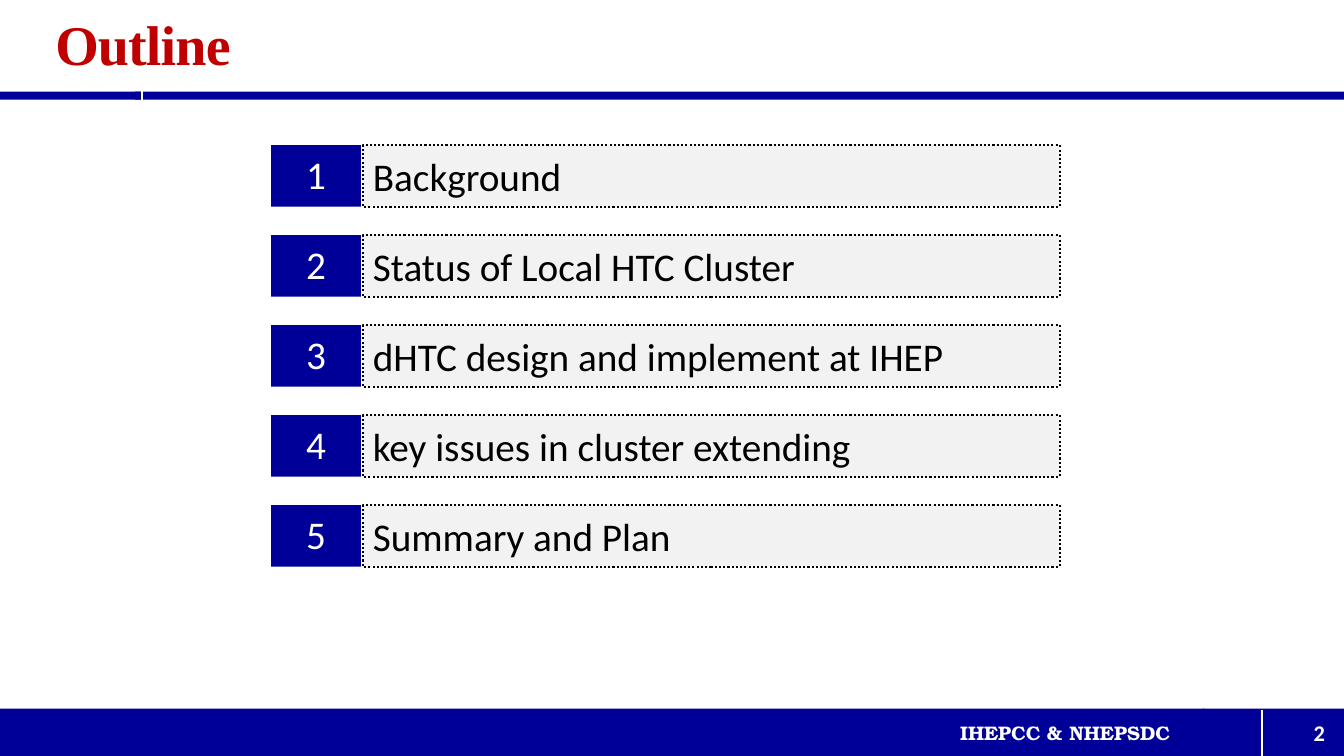
from lxml.etree import SubElement
from pptx import Presentation
from pptx.dml.color import RGBColor
from pptx.enum.dml import MSO_LINE
from pptx.enum.shapes import MSO_CONNECTOR, MSO_SHAPE
from pptx.enum.text import MSO_ANCHOR, PP_ALIGN
from pptx.oxml.ns import qn
from pptx.util import Inches, Pt

TITLE = "Outline"
TOPICS = [
    "Background",
    "Status of Local HTC Cluster",
    "dHTC design and implement at IHEP",
    "key issues in cluster extending",
    "Summary and Plan",
]
FOOTER = "IHEPCC & NHEPSDC"
PAGE = "2"

NAVY, RED, GREY, WHITE, BLACK = "000099", "C00000", "F2F2F2", "FFFFFF", "000000"
WIDTH, HEIGHT = 13.33, 7.5
RULE_TOP, RULE_HEIGHT, RULE_SPLIT = 0.91, 0.08, 1.41
FOOTER_TOP, PAGE_LEFT, PAGE_SPLIT = 7.03, 11.93, 12.52
LIST_TOP, ROW_STEP, ROW_HEIGHT = 1.44, 0.893, 0.61
NUMBER_LEFT, NUMBER_WIDTH = 2.69, 0.89
TOPIC_LEFT, TOPIC_WIDTH = 3.6, 6.91

deck = Presentation()
deck.slide_width, deck.slide_height = Inches(WIDTH), Inches(HEIGHT)
slide = deck.slides.add_slide(deck.slide_layouts[6])


def color(value):
    return RGBColor.from_string(value)


def block(left, top, width, height, fill, preset=MSO_SHAPE.RECTANGLE):
    shape = slide.shapes.add_shape(
        preset, Inches(left), Inches(top), Inches(width), Inches(height))
    shape.shadow.inherit = False
    shape.fill.solid()
    shape.fill.fore_color.rgb = color(fill)
    shape.line.fill.background()
    return shape


def label(left, top, width, height):
    return slide.shapes.add_textbox(
        Inches(left), Inches(top), Inches(width), Inches(height))


def write(holder, text, size, ink, font="Calibri", bold=False,
          align=PP_ALIGN.LEFT, anchor=MSO_ANCHOR.MIDDLE):
    frame = holder.text_frame
    frame.word_wrap = True
    frame.vertical_anchor = anchor
    paragraph = frame.paragraphs[0]
    paragraph.alignment = align
    run = paragraph.add_run()
    run.text = text
    run.font.size = Pt(size)
    run.font.name = font
    run.font.bold = bold
    run.font.color.rgb = color(ink)
    return paragraph


def divider(x, top, bottom):
    line = slide.shapes.add_connector(
        MSO_CONNECTOR.STRAIGHT, Inches(x), Inches(top), Inches(x), Inches(bottom))
    line.line.color.rgb = color(WHITE)
    line.line.width = Pt(1.5)
    SubElement(line._element.spPr, qn("a:effectLst"))


block(1.34, RULE_TOP, WIDTH - 1.34, RULE_HEIGHT, NAVY)
block(0, RULE_TOP, RULE_SPLIT, RULE_HEIGHT, NAVY)
divider(RULE_SPLIT, RULE_TOP + RULE_HEIGHT, 0.9)

block(0, FOOTER_TOP, 11.94, 0.48, NAVY)
block(PAGE_LEFT, FOOTER_TOP, WIDTH - PAGE_LEFT, 0.48, NAVY)
write(label(11.28, 7.04, 1.96, 0.46), PAGE, 16, WHITE, bold=True,
      align=PP_ALIGN.RIGHT)
corner = block(PAGE_LEFT, 7.04, 0.58, 0.46, NAVY, MSO_SHAPE.RIGHT_TRIANGLE)
corner._element.spPr.find(qn("a:xfrm")).set("flipV", "1")
divider(PAGE_SPLIT, 7.04, HEIGHT)
write(label(8, 7.1, 5.13, 0.34), FOOTER, 14, WHITE, "TeX Gyre Bonum", True,
      PP_ALIGN.CENTER, MSO_ANCHOR.TOP)

heading = write(label(0.45, 0.11, 11.5, 0.73), TITLE, 40, RED,
                "Times New Roman", True)
heading.line_spacing = 0.9
heading.runs[0]._r.get_or_add_rPr().set("spc", "-60")

for index, topic in enumerate(TOPICS):
    top = LIST_TOP + index * ROW_STEP
    number = block(NUMBER_LEFT, top, NUMBER_WIDTH, ROW_HEIGHT, NAVY)
    write(number, str(index + 1), 28, WHITE, align=PP_ALIGN.CENTER,
          anchor=MSO_ANCHOR.TOP)
    bar = block(TOPIC_LEFT, top, TOPIC_WIDTH, ROW_HEIGHT, GREY)
    bar.line.color.rgb = color(BLACK)
    bar.line.width = Pt(1.5)
    bar.line.dash_style = MSO_LINE.ROUND_DOT
    write(bar, topic, 28, BLACK)

deck.save("out.pptx")
